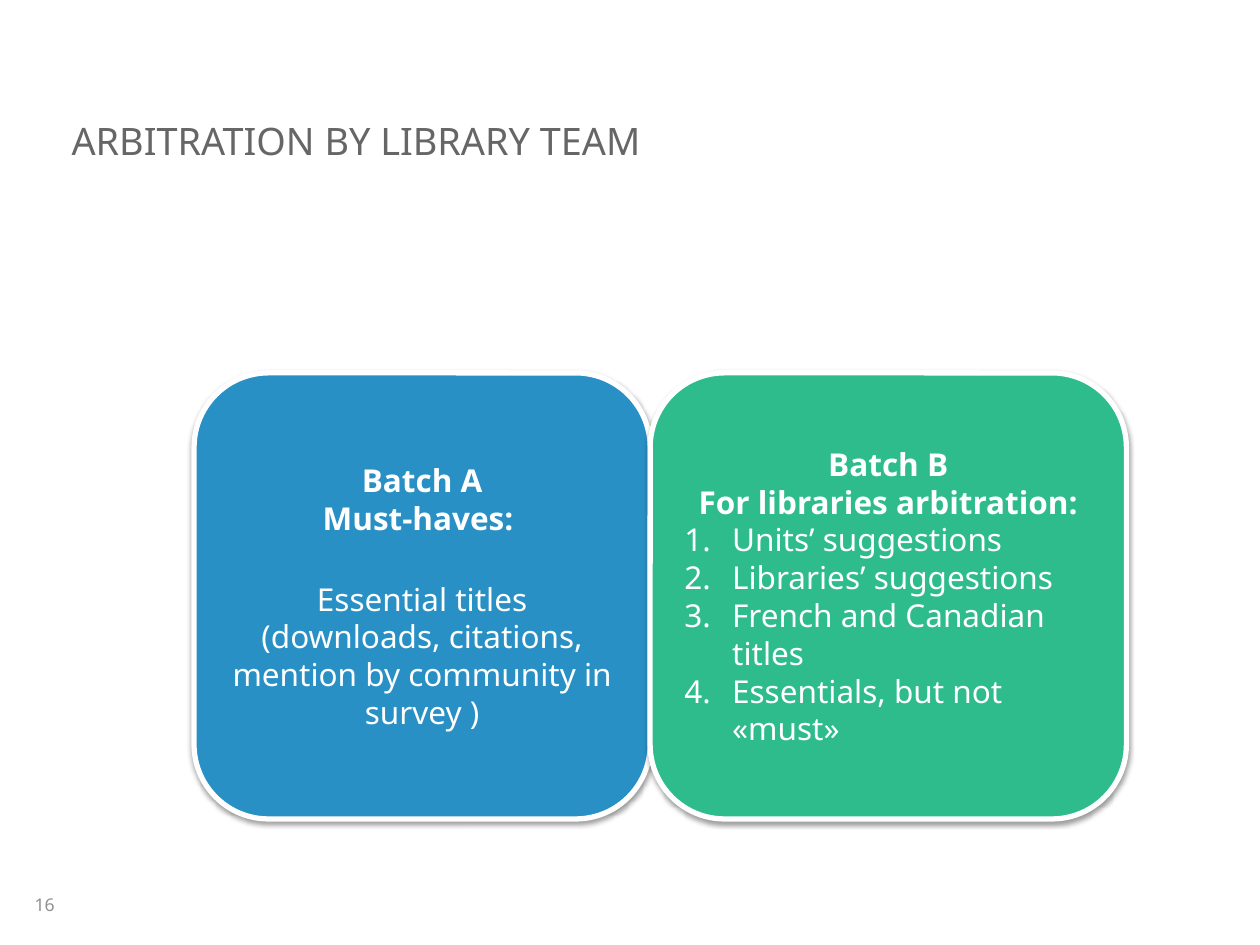
from dataclasses import dataclass

from lxml.etree import SubElement
from pptx import Presentation
from pptx.dml.color import RGBColor
from pptx.enum.shapes import MSO_SHAPE as Shape
from pptx.enum.text import MSO_ANCHOR as Anchor, PP_ALIGN as Align
from pptx.oxml.ns import qn
from pptx.util import Inches, Pt

FONT = "Noto Sans"
COLORS = {
    "title": "666666",
    "number": "909090",
    "white": "FFFFFF",
    "blue": "2990C5",
    "green": "2EBC8D",
    "shadow": "000000",
}
BATCH_TOP, BATCH_HEIGHT = 2.96, 3.54
LIST_INDENT = Inches(0.38)


@dataclass
class Line:
    text: str
    bold: bool = False
    numbered: bool = False
    space_before: float = 0


@dataclass
class Batch:
    left: float
    width: float
    color: str
    lines: list[Line]


BATCHES = [
    Batch(1.54, 3.62, "blue", [
        Line("Batch A", bold=True),
        Line("Must-haves: ", bold=True),
        Line("Essential titles (downloads, citations, mention by community in survey )",
             space_before=24.5),
    ]),
    Batch(5.16, 3.78, "green", [
        Line("Batch B", bold=True),
        Line("For libraries arbitration:", bold=True),
        Line("Units’ suggestions", numbered=True),
        Line("Libraries’ suggestions", numbered=True),
        Line("French and Canadian titles", numbered=True),
        Line("Essentials, but not «must»", numbered=True),
    ]),
]


def rgb(name: str) -> RGBColor:
    return RGBColor.from_string(COLORS[name])


def style(paragraph, size: float, color: str, bold: bool = False) -> None:
    font = paragraph.font
    font.name, font.size, font.bold = FONT, Pt(size), bold
    font.color.rgb = rgb(color)


def add_label(slide, left: float, top: float, width: float, height: float,
              text: str, size: float, color: str, anchor=Anchor.TOP):
    frame = slide.shapes.add_textbox(
        Inches(left), Inches(top), Inches(width), Inches(height)).text_frame
    frame.word_wrap = True
    frame.vertical_anchor = anchor
    paragraph = frame.paragraphs[0]
    paragraph.text = text
    style(paragraph, size, color)
    return paragraph


def add_shadow(shape) -> None:
    shape.shadow.inherit = False
    effects = shape._element.spPr.find(qn("a:effectLst"))
    shadow = SubElement(effects, qn("a:outerShdw"), blurRad=str(Pt(3.1)),
                        dist=str(Pt(1.6)), dir="5400000", rotWithShape="0")
    color = SubElement(shadow, qn("a:srgbClr"), val=COLORS["shadow"])
    SubElement(color, qn("a:alpha"), val="38000")


def number_paragraph(paragraph) -> None:
    properties = paragraph._p.get_or_add_pPr()
    properties.set("marL", str(LIST_INDENT))
    properties.set("indent", str(-LIST_INDENT))
    SubElement(properties, qn("a:buFont"), typeface="+mj-lt")
    SubElement(properties, qn("a:buAutoNum"), type="arabicPeriod")


def add_batch(slide, batch: Batch) -> None:
    shape = slide.shapes.add_shape(
        Shape.ROUNDED_RECTANGLE, Inches(batch.left), Inches(BATCH_TOP),
        Inches(batch.width), Inches(BATCH_HEIGHT))
    shape.fill.solid()
    shape.fill.fore_color.rgb = rgb(batch.color)
    shape.line.color.rgb = rgb("white")
    shape.line.width = Pt(3)
    add_shadow(shape)

    frame = shape.text_frame
    frame.word_wrap = True
    frame.vertical_anchor = Anchor.MIDDLE
    for index, line in enumerate(batch.lines):
        paragraph = frame.add_paragraph() if index else frame.paragraphs[0]
        paragraph.text = line.text
        paragraph.alignment = Align.LEFT if line.numbered else Align.CENTER
        if line.space_before:
            paragraph.space_before = Pt(line.space_before)
        if line.numbered:
            number_paragraph(paragraph)
        style(paragraph, 18, "white", line.bold)


def main() -> None:
    presentation = Presentation()
    presentation.slide_width, presentation.slide_height = Inches(10), Inches(7.5)
    slide = presentation.slides.add_slide(presentation.slide_layouts[6])

    # Slide number and title
    number = add_label(slide, 0.04, 6.98, 0.63, 0.39, "16", 10, "number", Anchor.MIDDLE)
    number.alignment = Align.CENTER
    title = add_label(slide, 0.47, 0.93, 8.94, 0.77,
                      "ARBITRATION BY LIBRARY TEAM", 21.6, "title")
    title.line_spacing = 0.9

    # The two batches side by side
    for batch in BATCHES:
        add_batch(slide, batch)

    presentation.save("out.pptx")


if __name__ == "__main__":
    main()
